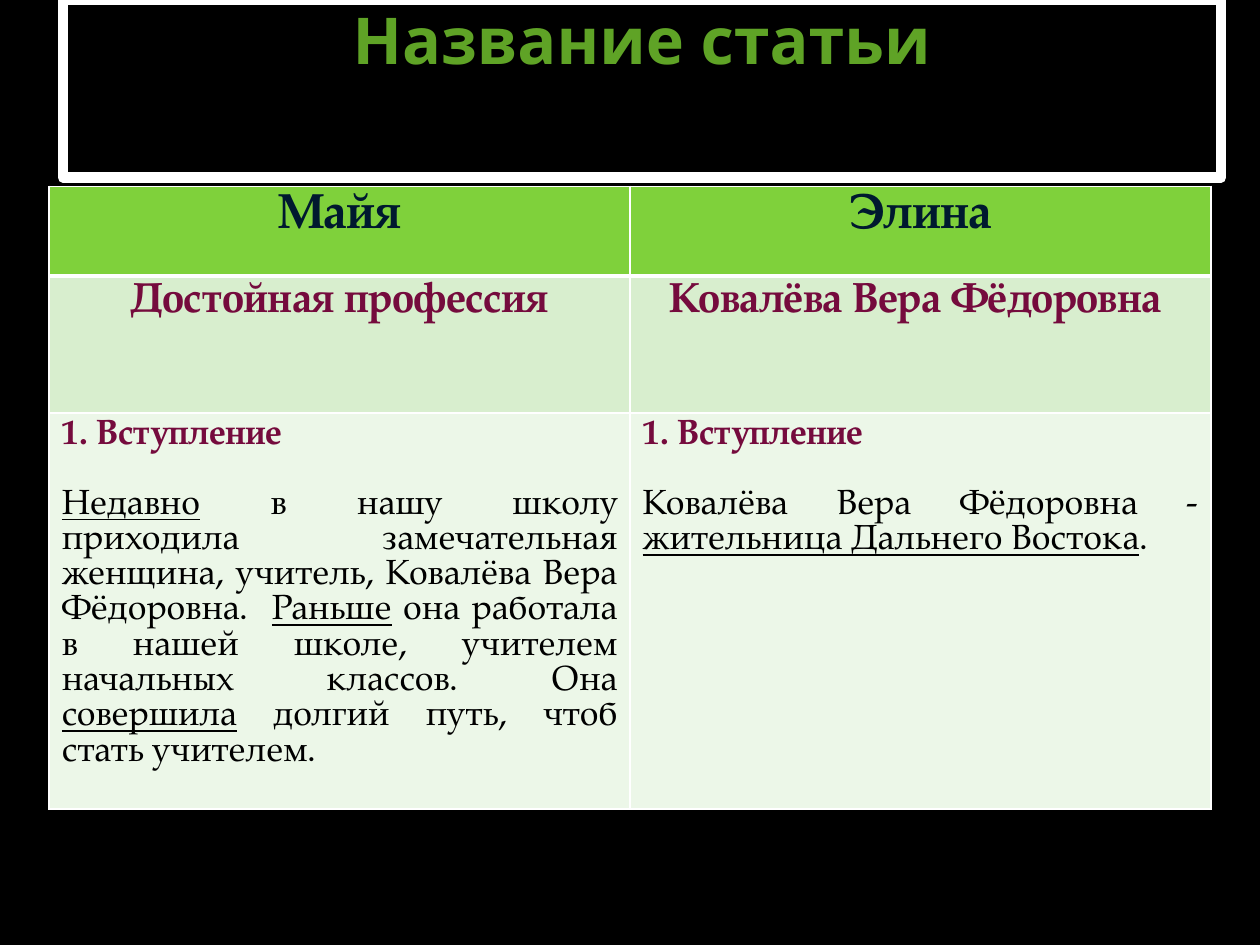
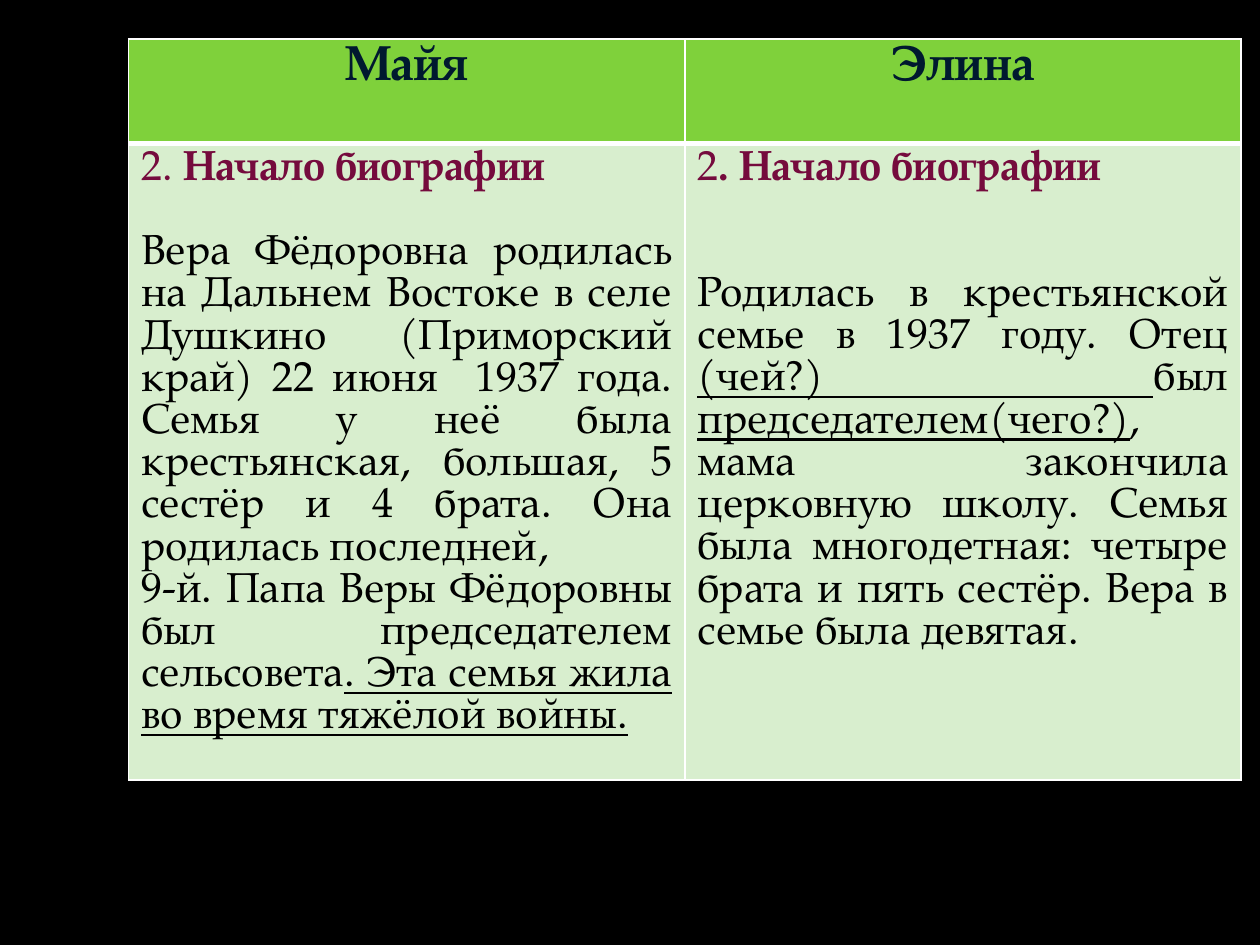
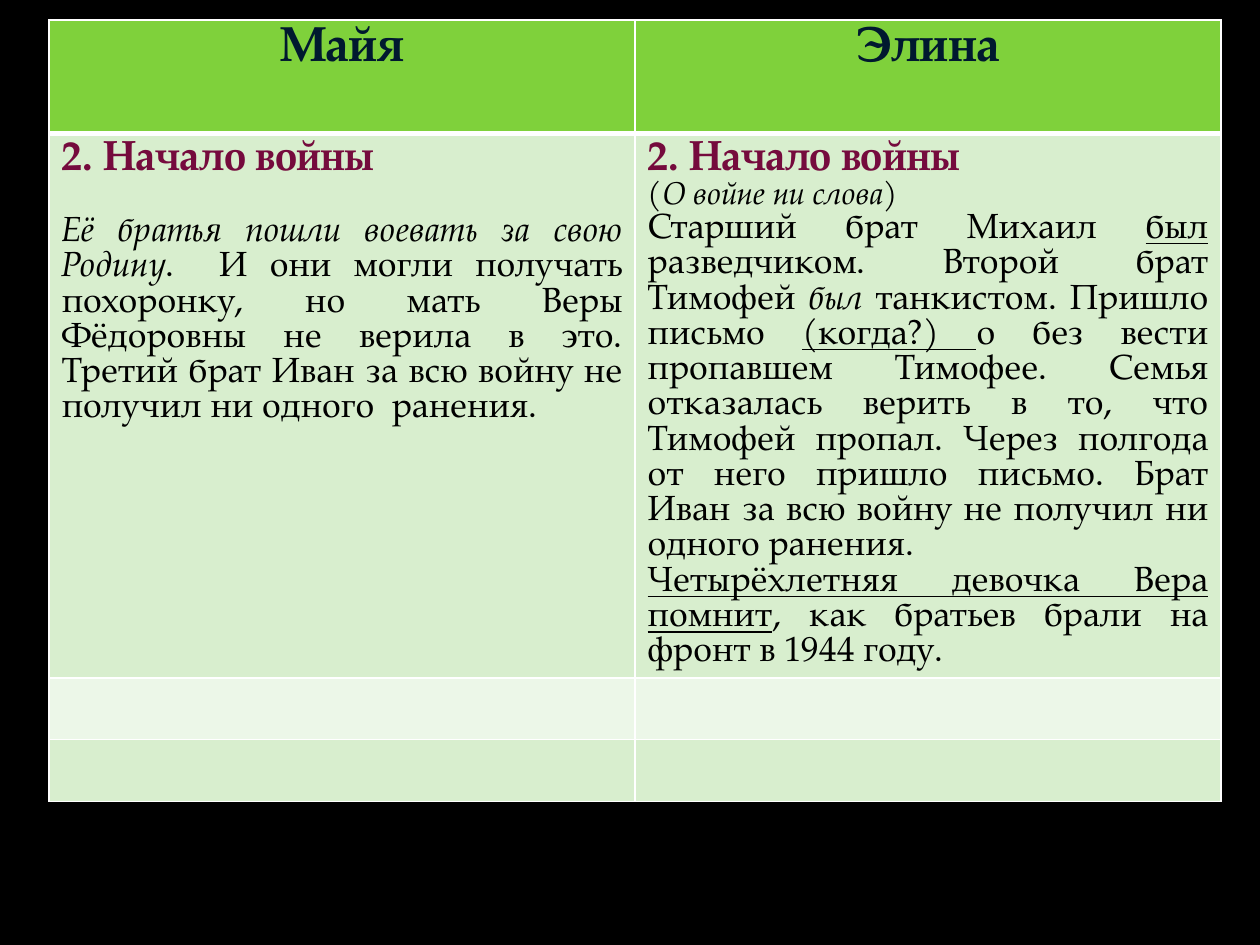
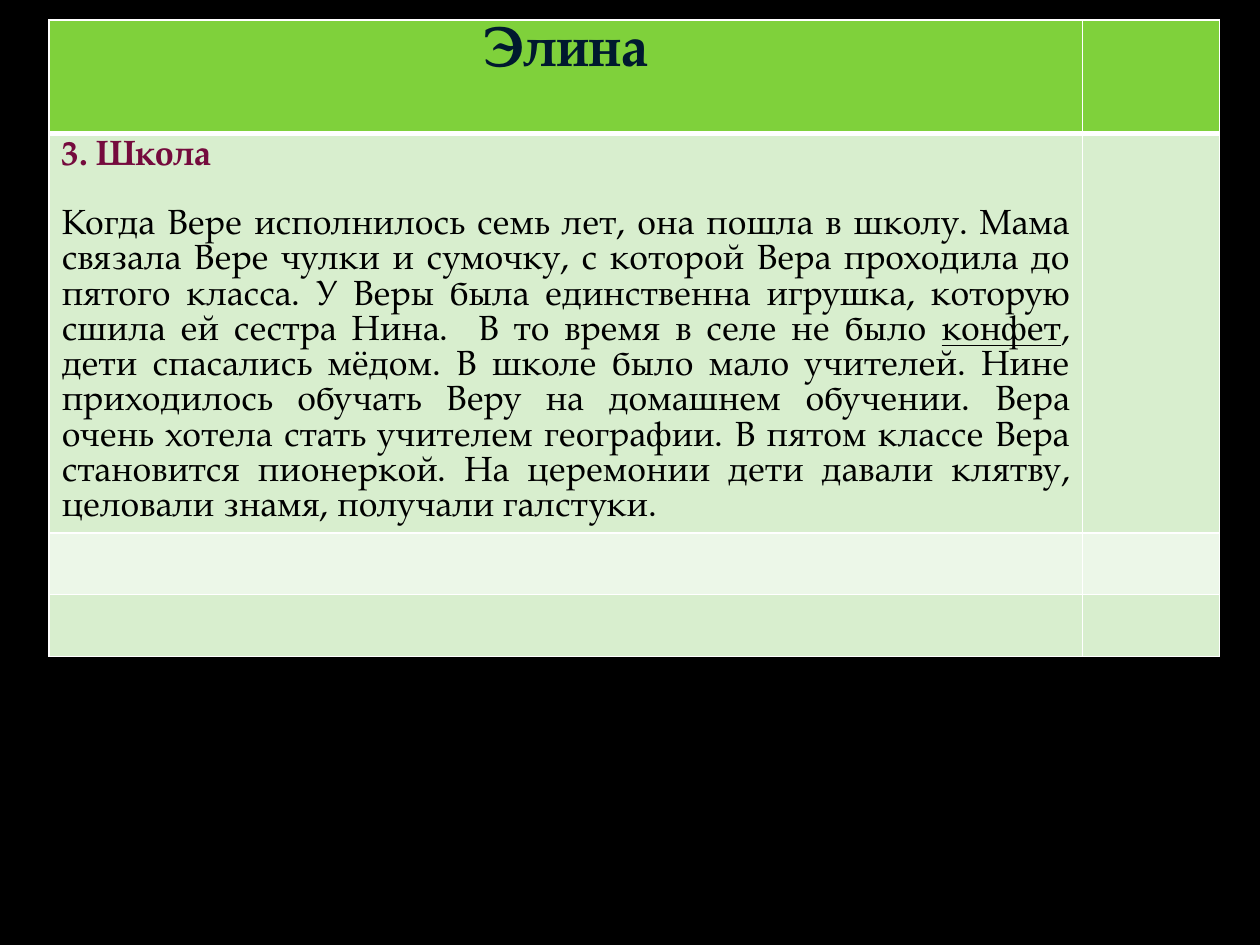
from dataclasses import dataclass
from itertools import groupby

from lxml import etree
from pptx import Presentation
from pptx.dml.color import RGBColor
from pptx.enum.text import MSO_ANCHOR, MSO_AUTO_SIZE, PP_ALIGN
from pptx.oxml.ns import qn
from pptx.util import Inches, Pt

CENTER, JUSTIFY, LEFT = PP_ALIGN.CENTER, PP_ALIGN.JUSTIFY, PP_ALIGN.LEFT
TOP = MSO_ANCHOR.TOP
NO_AUTOFIT = MSO_AUTO_SIZE.NONE

WIDTH, HEIGHT = 10, 7.5
COLUMNS, ROWS = 100, 75
TITLE_LAYOUT, BLANK_LAYOUT = 5, 6

TITLE_FONT, TEXT_FONT = "Noto Sans", "TeX Gyre Pagella"
BLACK, WHITE, TITLE_GREEN = "000000", "FFFFFF", "5FA326"
NAVY, PLUM = "00192F", "750B3D"
HEADER_FILL, BAND_FILLS = "7FD13B", ("D8EECE", "ECF7E8")
THIN, THICK = 1, 3

# Each mark switches its font attribute on or off within a text.
MARKS = {"_": "underline", "*": "italic", "^": "bold"}


@dataclass
class Para:
    text: str
    size: float = 20
    color: str = BLACK
    bold: bool = False
    align: int = JUSTIFY
    after: float = 0


def name(text, size=28):
    return [Para(text, size, NAVY, True, CENTER)]


def article(text):
    return [Para(text, 24, PLUM, True, CENTER)]


def heading(text, size=20, after=20, bold=True, align=JUSTIFY):
    return Para(text, size, PLUM, bold, align, after)


def rgb(color):
    return RGBColor.from_string(color)


def format_font(font, face, size, color, bold):
    font.name, font.size, font.bold = face, Pt(size), bold
    font.color.rgb = rgb(color)


def add_runs(p, text):
    state = {}
    for attribute, chars in groupby(text, key=MARKS.get):
        if attribute:
            state[attribute] = not state.get(attribute, False)
            continue
        r = p.add_run()
        r.text = "".join(chars)
        for key, on in state.items():
            setattr(r.font, key, on)


def add_border(tc_pr, side, width):
    ln = etree.SubElement(tc_pr, qn(f"a:ln{side}"), w=str(Pt(width)))
    fill = etree.SubElement(ln, qn("a:solidFill"))
    etree.SubElement(fill, qn("a:srgbClr"), val=WHITE)


class Deck:
    """Holds the shared style and the current slide."""

    def __init__(self):
        self.prs = Presentation()
        self.prs.slide_width, self.prs.slide_height = Inches(WIDTH), Inches(HEIGHT)
        fill = self.prs.slide_master.background.fill
        fill.solid()
        fill.fore_color.rgb = rgb(BLACK)
        self.s = None

    def x(self, columns):
        return round(self.prs.slide_width * columns / COLUMNS)

    def y(self, rows):
        return round(self.prs.slide_height * rows / ROWS)

    def slide(self, layout=BLANK_LAYOUT):
        self.s = self.prs.slides.add_slide(self.prs.slide_layouts[layout])

    def title(self, text, left, top, width, height):
        sp = self.s.shapes.title
        sp.left, sp.top = self.x(left), self.y(top)
        sp.width, sp.height = self.x(width), self.y(height)
        sp.line.color.rgb = rgb(WHITE)
        sp.line.width = Pt(6)
        tf = sp.text_frame
        tf.auto_size, tf.vertical_anchor, tf.margin_top = NO_AUTOFIT, TOP, 0
        p = tf.paragraphs[0]
        p.text, p.alignment = text, CENTER
        format_font(p.font, TITLE_FONT, 36.9, TITLE_GREEN, True)

    def table(self, left, top, widths, heights, content):
        """Fills the rows in content; any further rows stay empty."""
        frame = self.s.shapes.add_table(
            len(heights), len(widths), self.x(left), self.y(top),
            self.x(sum(widths)), self.y(sum(heights)))
        table = frame.table
        table.first_row = table.horz_banding = False
        for column, width in zip(table.columns, widths):
            column.width = self.x(width)
        for i, (row, height) in enumerate(zip(table.rows, heights)):
            row.height = self.y(height)
            for cell in row.cells:
                self.cell_style(cell, i)
        for row, texts in zip(table.rows, content):
            for cell, paras in zip(row.cells, texts):
                self.cell_text(cell, paras)

    def cell_style(self, cell, row):
        tc_pr = cell._tc.get_or_add_tcPr()
        for side in "LRTB":
            under_header = (row, side) in ((0, "B"), (1, "T"))
            add_border(tc_pr, side, THICK if under_header else THIN)
        cell.fill.solid()
        fill = BAND_FILLS[(row - 1) % 2] if row else HEADER_FILL
        cell.fill.fore_color.rgb = rgb(fill)

    def cell_text(self, cell, paras):
        tf = cell.text_frame
        for i, para in enumerate(paras):
            p = tf.add_paragraph() if i else tf.paragraphs[0]
            p.alignment = para.align
            p.space_after = Pt(para.after)
            format_font(p.font, TEXT_FONT, para.size, para.color, para.bold)
            add_runs(p, para.text)


def article_titles(deck):
    deck.slide(TITLE_LAYOUT)
    deck.title("Название статьи", 5, 0, 91.9, 14.1)
    intro = heading("1. Вступление")
    deck.table(3.9, 14.8, [46.1] * 2, [7.1, 10.9, 31.4], [
        [name("Майя"), name("Элина")],
        [article("Достойная профессия"), article("Ковалёва Вера Фёдоровна ")],
        [[intro, Para(
            "_Недавно_ в нашу школу приходила замечательная женщина, учитель, "
            "Ковалёва Вера Фёдоровна.  _Раньше_ она работала в нашей школе, "
            "учителем начальных классов. Она _совершила_ долгий путь, "
            "чтоб стать учителем.")],
         [intro, Para(
             "Ковалёва Вера Фёдоровна - _жительница Дальнего Востока_.")]],
    ])


def early_life(deck):
    deck.slide()
    deck.table(10.2, 3.1, [44.15] * 2, [8.3, 50.5], [
        [name("Майя"), name("Элина")],
        [[heading("2. ^Начало биографии", 24, 24, False),
          Para("Вера Фёдоровна родилась на Дальнем Востоке в селе Душкино "
               "(Приморский край) 22 июня  1937 года. Семья у неё была "
               "крестьянская, большая, 5 сестёр и 4 брата. Она родилась "
               "последней,", 24),
          Para("9-й. Папа Веры Фёдоровны был председателем сельсовета"
               "_. Эта семья жила во время тяжёлой войны._", 24)],
         [heading("2^. Начало биографии", 24, 48, False),
          Para("Родилась в крестьянской семье в 1937 году. Отец _(чей?) _был "
               "_председателем(чего?)_, мама закончила церковную школу. Семья "
               "была многодетная: четыре брата и пять сестёр. Вера в семье "
               "была девятая.", 24)]],
    ])


def war(deck):
    deck.slide()
    deck.table(3.9, 1.6, [46.5] * 2, [9, 43.2, 4.9, 4.9], [
        [name("Майя"), name("Элина")],
        [[heading("2. Начало войны", 24),
          Para("*Её братья пошли воевать за свою Родину*.  И они могли "
               "получать похоронку, но мать Веры Фёдоровны не верила в это. "
               "Третий брат Иван за всю войну не получил ни одного  ранения.")],
         [heading("2. Начало войны", 24, 0, align=LEFT),
          Para("(*О войне ни слова)*", 18, align=LEFT),
          Para("Старший брат Михаил _был_ разведчиком. Второй брат Тимофей "
               "*был* танкистом. Пришло письмо _(когда?) _о без вести "
               "пропавшем Тимофее. Семья отказалась верить в то, что Тимофей "
               "пропал. Через полгода от него пришло письмо. Брат Иван за всю "
               "войну не получил ни одного ранения."),
          Para("_Четырёхлетняя девочка Вера помнит_, как братьев брали на "
               "фронт в 1944 году.")]],
    ])


def school(deck):
    deck.slide()
    deck.table(3.9, 1.6, [82, 10.9], [9, 31.6, 4.9, 4.9], [
        [name("Элина", 32)],
        [[heading("3. Школа"),
          Para("Когда Вере исполнилось семь лет, она пошла в школу. Мама "
               "связала Вере чулки и сумочку, с которой Вера проходила до "
               "пятого класса. У Веры была единственна игрушка, которую сшила "
               "ей сестра Нина.  В то время в селе не было _конфет_, дети "
               "спасались мёдом. В школе было мало учителей. Нине приходилось "
               "обучать Веру на домашнем обучении. Вера очень хотела стать "
               "учителем географии. В пятом классе Вера становится пионеркой. "
               "На церемонии дети давали клятву, целовали знамя, получали "
               "галстуки.")]],
    ])


def main():
    deck = Deck()
    for build in (article_titles, early_life, war, school):
        build(deck)
    deck.prs.save("out.pptx")


if __name__ == "__main__":
    main()
